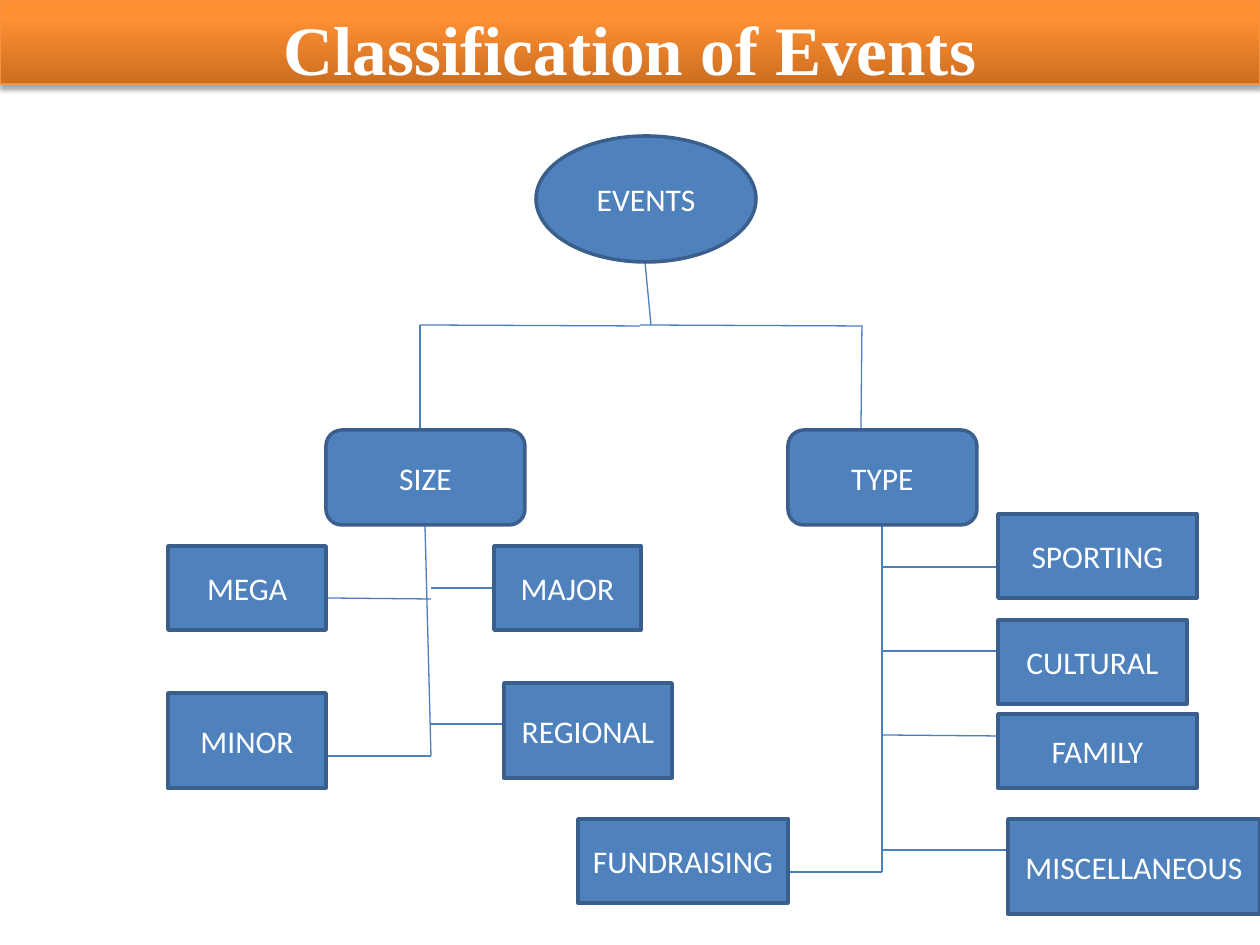
"""Build a slide with a tree diagram that classifies events by size and type."""
from copy import deepcopy

from lxml.etree import SubElement
from pptx import Presentation
from pptx.dml.color import RGBColor
from pptx.enum.shapes import MSO_CONNECTOR, MSO_SHAPE
from pptx.enum.text import MSO_ANCHOR, PP_ALIGN
from pptx.oxml import parse_xml
from pptx.oxml.ns import nsdecls, qn
from pptx.util import Emu, Pt


def px(*lengths):
    return [Emu(round(length * 914400 / 126)) for length in lengths]


def color(hex_string):
    return RGBColor.from_string(hex_string)


presentation = Presentation()
presentation.slide_width, presentation.slide_height = px(1260, 945)
slide = presentation.slides.add_slide(presentation.slide_layouts[6])

title = slide.shapes.add_shape(MSO_SHAPE.RECTANGLE, *px(0, 0, 1260, 84))
title.fill.gradient()
title.fill.gradient_angle = 90
first_stop, last_stop = title.fill.gradient_stops
first_stop.position, last_stop.position = 0, 0.8
first_stop.color.rgb = color("CC6E20")
last_stop.color.rgb = color("FF9034")
stop_list = title._element.spPr.find(".//" + qn("a:gsLst"))
stop_list.append(deepcopy(stop_list[-1]))
end_stop = title.fill.gradient_stops[2]
end_stop.position = 1
end_stop.color.rgb = color("FF9136")
title.line.color.rgb = color("F69240")
title.line.width = Pt(0.75)
title._element.spPr.append(parse_xml(
    f'<a:effectLst {nsdecls("a")}>'
    '<a:outerShdw blurRad="39400" dist="22900" dir="5400000" rotWithShape="0">'
    '<a:srgbClr val="000000"><a:alpha val="35000"/></a:srgbClr>'
    '</a:outerShdw></a:effectLst>'))
title_frame = title.text_frame
title_frame.text = "Classification of Events"
title_frame.vertical_anchor = MSO_ANCHOR.MIDDLE
title_frame.margin_top, title_frame.margin_bottom = px(12, 0)
title_paragraph = title_frame.paragraphs[0]
title_paragraph.alignment = PP_ALIGN.CENTER
title_font = title_paragraph.runs[0].font
title_font.name = "Times New Roman"
title_font.size = Pt(39.6)
title_font.bold = True
title_font.color.rgb = color("FFFFFF")

branches = [
    (651, 325, 645, 262),
    (640, 325, 861, 326),
    (640, 326, 420, 325),
    (420, 325, 420, 430),
    (862, 325, 861, 430),
    (425, 525, 431, 756),
    (431, 599, 326, 598),
    (431, 588, 494, 588),
    (431, 756, 326, 756),
    (504, 724, 431, 724),
    (882, 525, 882, 872),
    (882, 567, 998, 567),
    (882, 651, 998, 651),
    (882, 735, 998, 736),
    (882, 850, 1008, 850),
    (882, 872, 788, 872),
]
for ends in branches:
    connector = slide.shapes.add_connector(MSO_CONNECTOR.STRAIGHT, *px(*ends))
    connector.line.color.rgb = color("4B7EBC")
    connector.line.width = Pt(0.75)
    SubElement(connector._element.spPr, qn("a:effectLst"))

nodes = [
    ("EVENTS", MSO_SHAPE.OVAL, 536, 136, 220, 126),
    ("SIZE", MSO_SHAPE.ROUNDED_RECTANGLE, 326, 430, 199, 95),
    ("TYPE", MSO_SHAPE.ROUNDED_RECTANGLE, 788, 430, 189, 95),
    ("MEGA", MSO_SHAPE.RECTANGLE, 168, 546, 158, 84),
    ("MAJOR", MSO_SHAPE.RECTANGLE, 494, 546, 147, 84),
    ("MINOR", MSO_SHAPE.RECTANGLE, 168, 693, 158, 95),
    ("REGIONAL", MSO_SHAPE.RECTANGLE, 504, 683, 168, 95),
    ("SPORTING", MSO_SHAPE.RECTANGLE, 998, 514, 199, 84),
    ("CULTURAL", MSO_SHAPE.RECTANGLE, 998, 620, 189, 84),
    ("FUNDRAISING", MSO_SHAPE.RECTANGLE, 578, 819, 210, 84),
    ("FAMILY", MSO_SHAPE.RECTANGLE, 998, 714, 199, 74),
    ("MISCELLANEOUS", MSO_SHAPE.RECTANGLE, 1008, 819, 252, 95),
]
for label, outline, *box in nodes:
    shape = slide.shapes.add_shape(outline, *px(*box))
    shape.shadow.inherit = False
    shape.fill.solid()
    shape.fill.fore_color.rgb = color("4F81BD")
    shape.line.color.rgb = color("3A5F8C")
    shape.line.width = Pt(2)
    shape.text_frame.text = label
    shape.text_frame.vertical_anchor = MSO_ANCHOR.MIDDLE
    paragraph = shape.text_frame.paragraphs[0]
    paragraph.alignment = PP_ALIGN.CENTER
    font = paragraph.runs[0].font
    font.name = "Calibri"
    font.size = Pt(18)
    font.color.rgb = color("FFFFFF")

presentation.save("out.pptx")
